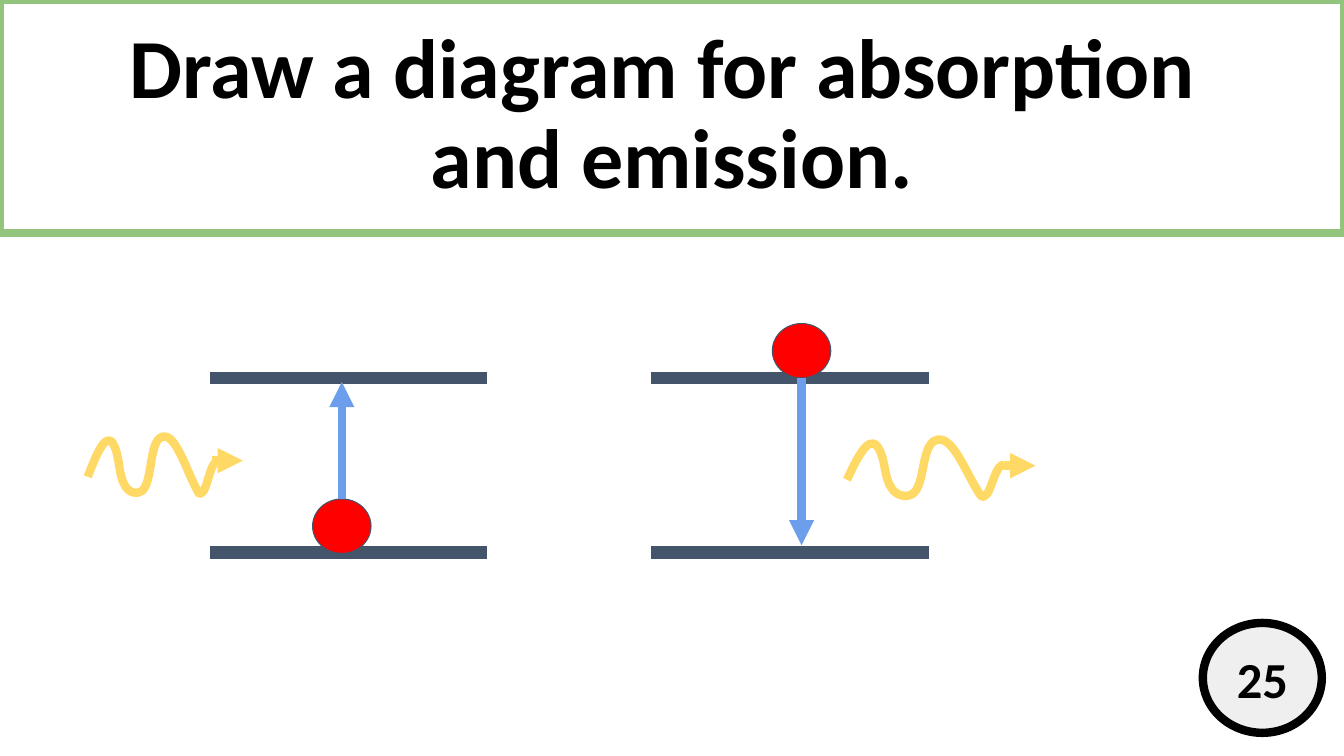
from lxml import etree
from pptx import Presentation
from pptx import util as u
from pptx.dml.color import RGBColor
from pptx.enum import shapes, text
from pptx.oxml import ns

TITLE = ["Draw a diagram for absorption ", "and emission."]
NUMBER = "25"
FONT = "Calibri"
BLACK, GREEN, GREY = "000000", "93C47D", "EFEFEF"
SLATE, RED, BLUE, YELLOW = "44546A", "FF0000", "6D9EEB", "FFD966"

LEVEL_YS = [5.48, 3.75]
LEVEL_LEFTS = [2.08, 6.46]
LEVEL_WIDTH = 2.75
ELECTRONS = [(3.1, 4.95), (7.66, 3.21)]
ELECTRON_SIZE = (0.58, 0.54)
JUMPS = [(3.39, 4.95, 3.79), (7.95, 3.75, 5.41)]
WAVES = [(0.87, 4.33, 1.29), (8.4, 4.36, 1.56)]
HEADS = [(2.1, 4.57), (9.96, 4.62)]
HEAD_WIDTH = 0.31
WAVE_WIDTH, WAVE_HEIGHT = 1.29, 0.57
WAVE_START = (0, 0.4)
WAVE_CURVES = [
    [(0.06, 0.25), (0.17, -0.06), (0.25, 0.07)],
    [(0.32, 0.18), (0.3, 0.38), (0.37, 0.49)],
    [(0.41, 0.56), (0.49, 0.58), (0.54, 0.54)],
    [(0.64, 0.45), (0.61, 0.11), (0.71, 0.02)],
    [(0.86, -0.1), (0.98, 0.36), (1.1, 0.56)],
    [(1.11, 0.58), (1.14, 0.56), (1.15, 0.54)],
    [(1.2, 0.45), (1.22, 0.25), (1.29, 0.25)],
]


def rgb(value):
    return RGBColor.from_string(value)


def set_line(sp, color, width):
    sp.line.color.rgb = rgb(color)
    sp.line.width = u.Pt(width)


def write(tf, lines, size, margin, spacing=1.0):
    tf.word_wrap = True
    tf.auto_size = text.MSO_AUTO_SIZE.NONE
    tf.vertical_anchor = text.MSO_ANCHOR.MIDDLE
    tf.margin_left = tf.margin_right = u.Inches(0.1)
    tf.margin_top = tf.margin_bottom = u.Inches(margin)
    for i, line in enumerate(lines):
        p = tf.add_paragraph() if i else tf.paragraphs[0]
        p.alignment = text.PP_ALIGN.CENTER
        p.line_spacing = spacing
        r = p.add_run()
        r.text = line
        r.font.name = FONT
        r.font.size = u.Pt(size)
        r.font.bold = True
        r.font.color.rgb = rgb(BLACK)


def add_ellipse(s, box, fill, color, width):
    sp = s.shapes.add_shape(shapes.MSO_SHAPE.OVAL, *map(u.Inches, box))
    sp.shadow.inherit = False
    sp.fill.solid()
    sp.fill.fore_color.rgb = rgb(fill)
    set_line(sp, color, width)
    return sp


def add_line(s, ends, color, width, arrow=False):
    sp = s.shapes.add_connector(shapes.MSO_CONNECTOR.STRAIGHT, *map(u.Inches, ends))
    set_line(sp, color, width)
    if arrow:
        etree.SubElement(sp.line._get_or_add_ln(), ns.qn("a:tailEnd"), type="triangle")
    etree.SubElement(sp._element.spPr, ns.qn("a:effectLst"))


def add_wave(s, x, y, width):
    builder = s.shapes.build_freeform(u.Inches(x), u.Inches(y))
    builder.add_line_segments([(u.Inches(x + width), u.Inches(y + WAVE_HEIGHT))], close=False)
    sp = builder.convert_to_shape()
    outline = sp._element.find(".//" + ns.qn("a:path"))
    for child in list(outline):
        outline.remove(child)
    stretch = width / WAVE_WIDTH
    steps = [("a:moveTo", [WAVE_START])] + [("a:cubicBezTo", c) for c in WAVE_CURVES]
    for tag, points in steps:
        step = etree.SubElement(outline, ns.qn(tag))
        for px, py in points:
            etree.SubElement(step, ns.qn("a:pt"),
                             x=str(int(u.Inches(px * stretch))), y=str(int(u.Inches(py))))
    sp.shadow.inherit = False
    sp.fill.background()
    set_line(sp, YELLOW, 6)


def main():
    prs = Presentation()
    prs.slide_width, prs.slide_height = u.Inches(13.33), u.Inches(7.5)
    s = prs.slides.add_slide(prs.slide_layouts[5])

    title = s.shapes.title
    title.left, title.top = 0, 0
    title.width, title.height = u.Inches(13.33), u.Inches(2.31)
    set_line(title, GREEN, 6)
    write(title.text_frame, TITLE, 60, 0.05, 0.9)

    badge = add_ellipse(s, (11.93, 6.18, 1.18, 1.09), GREY, BLACK, 6)
    write(badge.text_frame, [NUMBER], 36, 0.1)

    for x in LEVEL_LEFTS:
        for y in LEVEL_YS:
            add_line(s, (x, y, x + LEVEL_WIDTH, y), SLATE, 9)
    for corner in ELECTRONS:
        add_ellipse(s, corner + ELECTRON_SIZE, RED, SLATE, 0.75)
    for x, start, end in JUMPS:
        add_line(s, (x, start, x, end), BLUE, 6, arrow=True)
    for wave in WAVES:
        add_wave(s, *wave)
    for x, y in HEADS:
        add_line(s, (x, y, x + HEAD_WIDTH, y), YELLOW, 6, arrow=True)

    prs.save("out.pptx")


if __name__ == "__main__":
    main()
